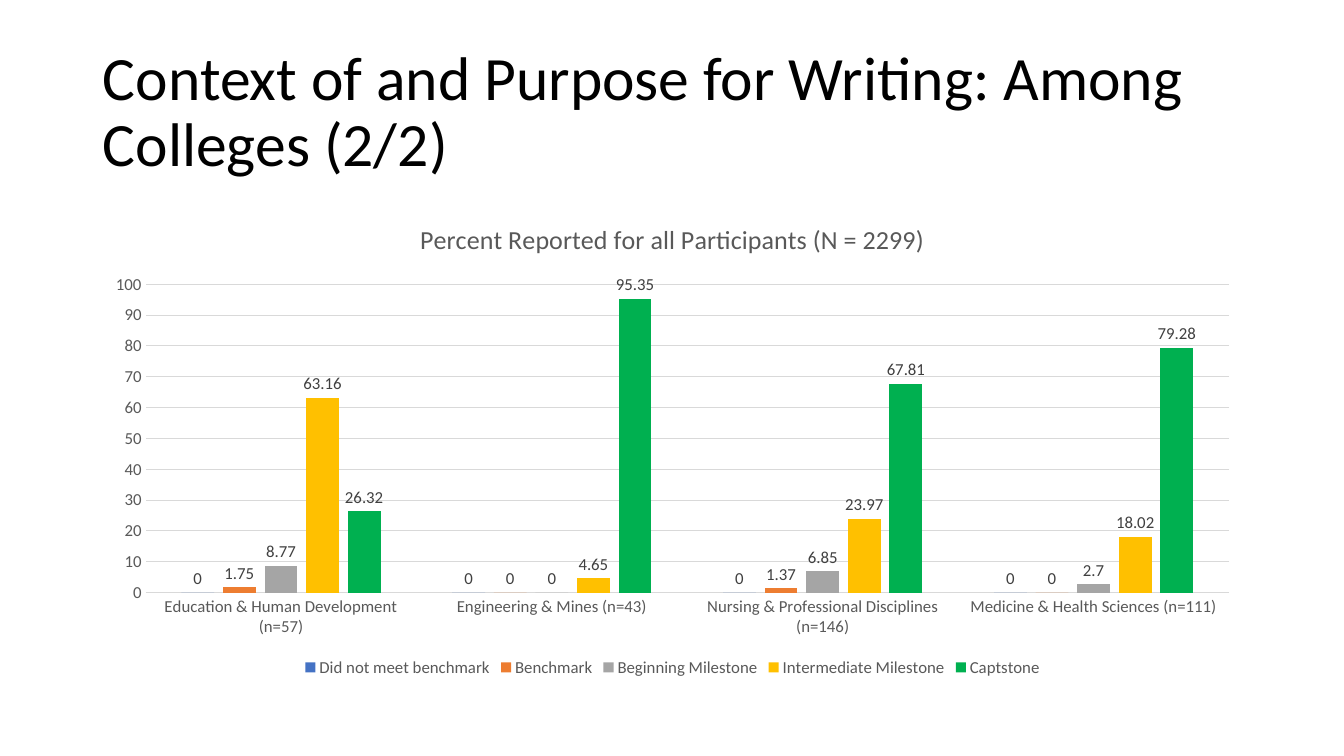
from pptx import Presentation
from pptx.chart.data import CategoryChartData
from pptx.dml.color import RGBColor
from pptx.enum.chart import XL_CHART_TYPE, XL_LABEL_POSITION, XL_LEGEND_POSITION, XL_TICK_MARK
from pptx.enum.text import MSO_ANCHOR, MSO_AUTO_SIZE, PP_ALIGN
from pptx.util import Inches, Pt

CLUSTERED = XL_CHART_TYPE.COLUMN_CLUSTERED
OUTSIDE_END = XL_LABEL_POSITION.OUTSIDE_END
LEGEND_BOTTOM = XL_LEGEND_POSITION.BOTTOM
NO_TICK = XL_TICK_MARK.NONE
MIDDLE = MSO_ANCHOR.MIDDLE
NO_AUTOFIT = MSO_AUTO_SIZE.NONE
LEFT = PP_ALIGN.LEFT

FONT = "Calibri"
BLACK = RGBColor(0x00, 0x00, 0x00)
LABEL_GRAY = RGBColor(0x40, 0x40, 0x40)
TEXT_GRAY = RGBColor(0x59, 0x59, 0x59)
GRID_GRAY = RGBColor(0xD9, 0xD9, 0xD9)
BLUE = RGBColor(0x44, 0x72, 0xC4)
ORANGE = RGBColor(0xED, 0x7D, 0x31)
GRAY = RGBColor(0xA5, 0xA5, 0xA5)
GOLD = RGBColor(0xFF, 0xC0, 0x00)
GREEN = RGBColor(0x00, 0xB0, 0x50)

COLLEGES = [
    "Education & Human Development (n=57)",
    "Engineering & Mines (n=43)",
    "Nursing & Professional Disciplines (n=146)",
    "Medicine & Health Sciences (n=111)",
]
LEVELS = [
    ("Did not meet benchmark", (0, 0, 0, 0), BLUE),
    ("Benchmark", (1.75, 0, 1.37, 0), ORANGE),
    ("Beginning Milestone", (8.77, 0, 6.85, 2.7), GRAY),
    ("Intermediate Milestone", (63.16, 4.65, 23.97, 18.02), GOLD),
    ("Captstone", (26.32, 95.35, 67.81, 79.28), GREEN),
]


def style_font(font, size, color):
    """Apply the slide's typeface with a size and a colour."""
    font.name = FONT
    font.size = Pt(size)
    font.bold = False
    font.color.rgb = color


def style_line(line):
    """Draw a thin gray line."""
    line.color.rgb = GRID_GRAY
    line.width = Pt(0.75)


def add_heading(slide, text):
    """Place and format the slide title."""
    heading = slide.shapes.title
    heading.left, heading.top = Inches(0.92), Inches(0.4)
    heading.width, heading.height = Inches(11.5), Inches(1.45)
    frame = heading.text_frame
    frame.word_wrap = True
    frame.auto_size = NO_AUTOFIT
    frame.vertical_anchor = MIDDLE
    paragraph = frame.paragraphs[0]
    paragraph.alignment = LEFT
    paragraph.line_spacing = 0.9
    run = paragraph.add_run()
    run.text = text
    style_font(run.font, 44, BLACK)


def style_axes(chart):
    """Format both axes and the gridlines."""
    colleges, percent = chart.category_axis, chart.value_axis
    for axis in (colleges, percent):
        axis.major_tick_mark = NO_TICK
        axis.minor_tick_mark = NO_TICK
        style_font(axis.tick_labels.font, 12, TEXT_GRAY)
    style_line(colleges.format.line)
    percent.format.line.fill.background()
    percent.minimum_scale, percent.maximum_scale = 0, 100
    percent.major_unit = 10
    percent.has_major_gridlines = True
    style_line(percent.major_gridlines.format.line)


def style_level(level, color):
    """Colour one series and show its values above the columns."""
    level.format.fill.solid()
    level.format.fill.fore_color.rgb = color
    level.invert_if_negative = False
    labels = level.data_labels
    labels.show_value = True
    labels.position = OUTSIDE_END
    style_font(labels.font, 12, LABEL_GRAY)


def add_college_chart(slide, title):
    """Add the clustered columns comparing colleges."""
    data = CategoryChartData()
    data.categories = COLLEGES
    for name, values, _ in LEVELS:
        data.add_series(name, values)
    chart = slide.shapes.add_chart(
        CLUSTERED, Inches(0.92), Inches(2), Inches(11.5), Inches(4.76), data
    ).chart
    style_font(chart.font, 10, BLACK)
    chart.has_title = True
    run = chart.chart_title.text_frame.paragraphs[0].add_run()
    run.text = title
    style_font(run.font, 18.6, TEXT_GRAY)
    chart.chart_title.include_in_layout = False
    chart.has_legend = True
    chart.legend.position = LEGEND_BOTTOM
    chart.legend.include_in_layout = False
    style_font(chart.legend.font, 12, TEXT_GRAY)
    style_axes(chart)
    columns = chart.plots[0]
    columns.vary_by_categories = False
    columns.gap_width = 219
    columns.overlap = -27
    for level, (_, _, color) in zip(columns.series, LEVELS):
        style_level(level, color)


def main():
    """Build and save the slide."""
    deck = Presentation()
    deck.slide_width, deck.slide_height = Inches(13.33), Inches(7.5)
    slide = deck.slides.add_slide(deck.slide_layouts[5])
    add_heading(slide, "Context of and Purpose for Writing: Among Colleges (2/2)")
    add_college_chart(slide, "Percent Reported for all Participants (N = 2299)")
    deck.save("out.pptx")


if __name__ == "__main__":
    main()
